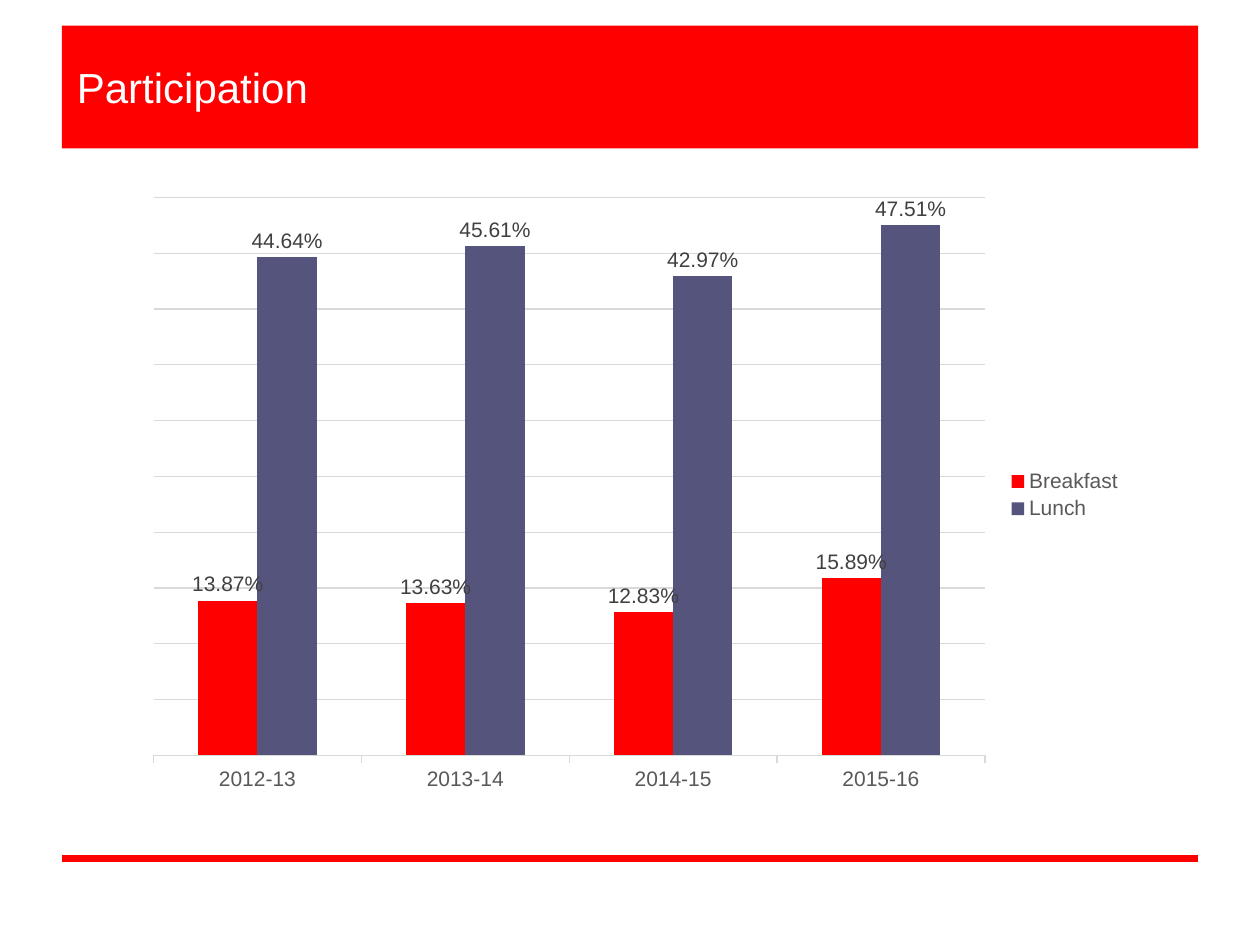
import pptx
import pptx.chart.data
import pptx.dml.color
import pptx.enum.chart
import pptx.enum.shapes
import pptx.enum.text
import pptx.oxml
import pptx.oxml.ns
import pptx.util

Inches, Pt = pptx.util.Inches, pptx.util.Pt
RED, NAVY, WHITE = "FF0000", "55547D", "FFFFFF"
GRAY, DARK, PALE = "595959", "404040", "D9D9D9"


def color(code):
    return pptx.dml.color.RGBColor.from_string(code)


def assign(item, values):
    for name, value in values.items():
        setattr(item, name, value)


class Deck:
    face = "Arial"

    def __init__(self, wide, high):
        self.file = pptx.Presentation()
        assign(self.file, {"slide_width": Inches(wide), "slide_height": Inches(high)})
        self.slide = self.file.slides.add_slide(self.file.slide_layouts[5])

    def font(self, font, size, code):
        assign(font, {"name": self.face, "size": Pt(size)})
        font.color.rgb = color(code)

    def stroke(self, line, code, width):
        line.color.rgb = color(code)
        line.width = Pt(width)

    def rule(self, left, right, top, code, width):
        kind = pptx.enum.shapes.MSO_CONNECTOR.STRAIGHT
        line = self.slide.shapes.add_connector(
            kind, Inches(right), Inches(top), Inches(left), Inches(top))
        self.stroke(line.line, code, width)
        props = line._element.spPr
        props.append(props.makeelement(pptx.oxml.ns.qn("a:effectLst"), {}))

    def title(self, text, left, top, wide, high):
        shape = self.slide.shapes.title
        assign(shape, {"left": Inches(left), "top": Inches(top),
                       "width": Inches(wide), "height": Inches(high)})
        shape.fill.solid()
        shape.fill.fore_color.rgb = color(RED)
        frame = shape.text_frame
        assign(frame, {
            "text": text, "word_wrap": True,
            "margin_left": Inches(0.12), "margin_top": Inches(0.14),
            "margin_right": Inches(0.08), "margin_bottom": Inches(0.1),
            "vertical_anchor": pptx.enum.text.MSO_ANCHOR.MIDDLE,
            "auto_size": pptx.enum.text.MSO_AUTO_SIZE.SHAPE_TO_FIT_TEXT})
        para = frame.paragraphs[0]
        assign(para, {"alignment": pptx.enum.text.PP_ALIGN.LEFT, "line_spacing": 0.9})
        self.font(para.runs[0].font, 24, WHITE)

    def columns(self, cats, series, left, top, wide, high):
        kinds = pptx.enum.chart
        data = pptx.chart.data.CategoryChartData(number_format="0.00%")
        data.categories = cats
        for name, values, _ in series:
            data.add_series(name, values)
        chart = self.slide.shapes.add_chart(
            kinds.XL_CHART_TYPE.COLUMN_CLUSTERED, Inches(left), Inches(top),
            Inches(wide), Inches(high), data).chart
        assign(chart, {"has_title": False, "has_legend": True})
        self.font(chart.font, 10, "000000")

        # Legend
        assign(chart.legend, {"position": kinds.XL_LEGEND_POSITION.RIGHT,
                              "include_in_layout": False})
        self.font(chart.legend.font, 12, GRAY)

        # Axes
        axis = chart.category_axis
        assign(axis, {"major_tick_mark": kinds.XL_TICK_MARK.OUTSIDE,
                      "has_major_gridlines": False})
        self.font(axis.tick_labels.font, 12, GRAY)
        self.stroke(axis.format.line, PALE, 0.75)
        axis = chart.value_axis
        assign(axis, {"visible": False, "has_major_gridlines": True,
                      "minimum_scale": 0, "maximum_scale": 0.5, "major_unit": 0.05})
        self.stroke(axis.major_gridlines.format.line, PALE, 0.75)

        # Columns and their labels
        plot = chart.plots[0]
        assign(plot, {"gap_width": 150, "overlap": 0, "vary_by_categories": False})
        for bars, (_, _, code) in zip(plot.series, series):
            bars.format.fill.solid()
            bars.format.fill.fore_color.rgb = color(code)
            assign(bars.data_labels, {
                "show_value": True, "number_format": "0.00%",
                "number_format_is_linked": False,
                "position": kinds.XL_LABEL_POSITION.OUTSIDE_END})
            self.font(bars.data_labels.font, 12, DARK)
        self.place(chart, 0.02, 0.02, 0.83, 0.9)

    def place(self, chart, left, top, wide, high):
        qn = pptx.oxml.ns.qn
        area = chart._chartSpace.chart.plotArea
        for old in area.findall(qn("c:layout")):
            area.remove(old)
        parts = [("layoutTarget", "inner"), ("xMode", "edge"), ("yMode", "edge"),
                 ("x", left), ("y", top), ("w", wide), ("h", high)]
        body = "".join(f'<c:{tag} val="{value}"/>' for tag, value in parts)
        area.insert(0, pptx.oxml.parse_xml(
            f'<c:layout {pptx.oxml.ns.nsdecls("c")}>'
            f"<c:manualLayout>{body}</c:manualLayout></c:layout>"))


def main():
    deck = Deck(10, 7.5)

    # Title band and footer rule
    deck.title("Participation", 0.49, 0.39, 9.02, 0.6)
    deck.rule(0.49, 9.51, 6.81, RED, 4)

    # Meal participation by school year
    years = ["2012-13", "2013-14", "2014-15", "2015-16"]
    meals = [("Breakfast", [0.1387, 0.1363, 0.1283, 0.1589], RED),
             ("Lunch", [0.4464, 0.4561, 0.4297, 0.4751], NAVY)]
    deck.columns(years, meals, 1.06, 1.47, 7.95, 4.92)

    deck.file.save("out.pptx")


if __name__ == "__main__":
    main()
